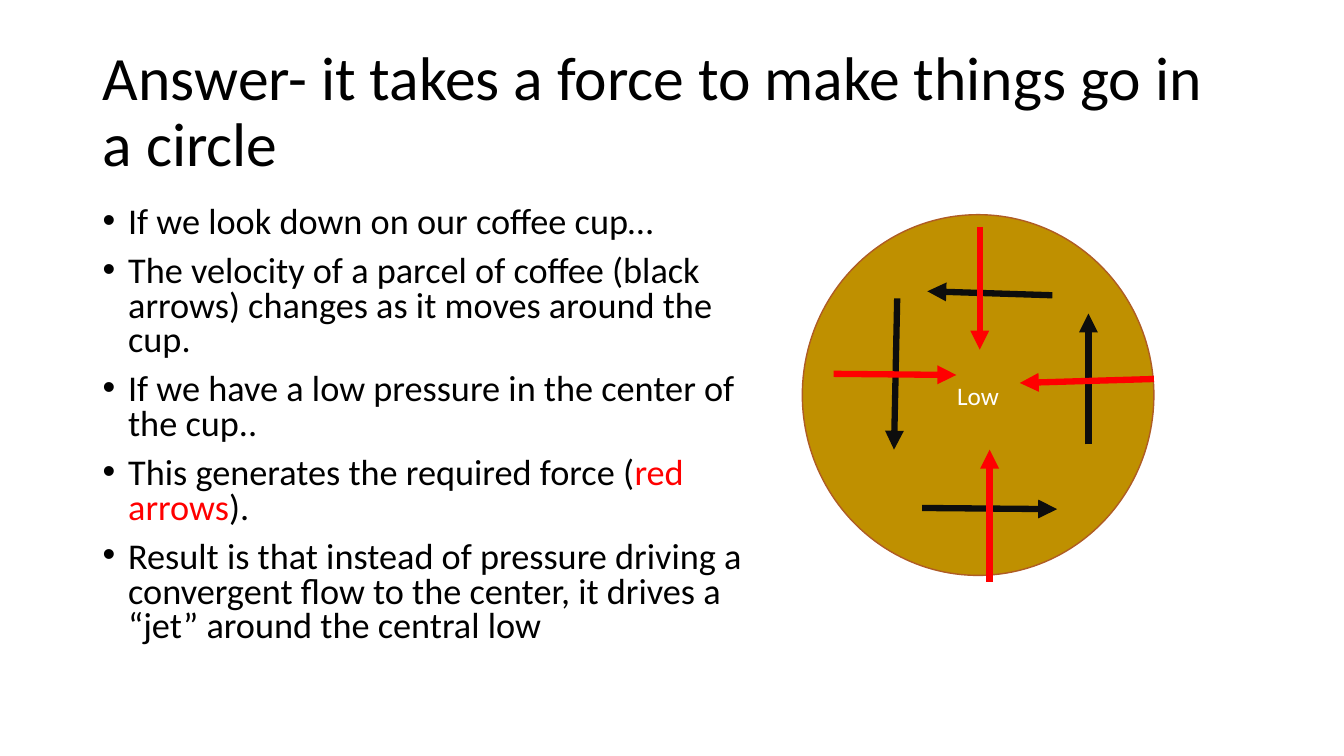
from dataclasses import dataclass

import pptx
import pptx.dml.color
import pptx.enum.shapes
import pptx.enum.text
import pptx.oxml.ns
import pptx.util
from lxml import etree
from pptx.util import Cm, Pt


@dataclass(frozen=True)
class Theme:
    font: str = "Calibri"
    text: str = "000000"
    force: str = "FF0000"
    velocity: str = "0D0D0D"
    coffee: str = "BF9000"
    rim: str = "AF5C24"
    label: str = "FFFFFF"
    title_size: float = 44
    body_size: float = 25.9
    label_size: float = 18
    arrow_width: float = 4.5


THEME = Theme()

TITLE = "Answer- it takes a force to make things go in a circle"
BULLETS = [
    [("If we look down on our coffee cup…", THEME.text)],
    [("The velocity of a parcel of coffee (black arrows) changes as it moves "
      "around the cup.", THEME.text)],
    [("If we have a low pressure in the center of the cup..", THEME.text)],
    [("This generates the required force (", THEME.text),
     ("red arrows", THEME.force), (").", THEME.text)],
    [("Result is that instead of pressure driving a convergent flow to the "
      "center, it drives a “jet” around the central low", THEME.text)],
]

# Each arrow runs from (x, y) to (x, y), in centimetres.
VELOCITY_ARROWS = [
    (23.24, 12.8, 26.64, 12.83),
    (26.52, 7.44, 23.37, 7.34),
    (27.43, 11.2, 27.43, 7.9),
    (22.61, 7.52, 22.53, 11.33),
]
FORCE_ARROWS = [
    (24.94, 14.66, 24.94, 11.33),
    (29.08, 9.55, 25.7, 9.65),
    (24.69, 5.72, 24.69, 8.81),
    (21.01, 9.42, 24.1, 9.45),
]


def rgb(color):
    return pptx.dml.color.RGBColor.from_string(color)


def add_element(parent, tag, **attributes):
    return etree.SubElement(parent, pptx.oxml.ns.qn(tag), attributes)


def add_run(paragraph, text, size, color):
    run = paragraph.add_run()
    run.text = text
    run.font.name = THEME.font
    run.font.size = Pt(size)
    run.font.color.rgb = rgb(color)


def add_text_frame(slide, left, top, width, height):
    box = slide.shapes.add_textbox(Cm(left), Cm(top), Cm(width), Cm(height))
    box.text_frame.word_wrap = True
    return box.text_frame


def add_title(slide):
    frame = add_text_frame(slide, 2.34, 1.02, 29.21, 3.68)
    frame.vertical_anchor = pptx.enum.text.MSO_ANCHOR.MIDDLE
    paragraph = frame.paragraphs[0]
    paragraph.line_spacing = 0.9
    add_run(paragraph, TITLE, THEME.title_size, THEME.text)


def make_bullet(paragraph):
    properties = paragraph._p.get_or_add_pPr()
    properties.set("marL", str(Cm(0.64)))
    properties.set("indent", str(-Cm(0.64)))
    add_element(properties, "a:buFont", typeface="Arial")
    add_element(properties, "a:buChar", char="•")


def add_bullets(slide):
    frame = add_text_frame(slide, 2.34, 5.08, 16.94, 12.09)
    for index, runs in enumerate(BULLETS):
        paragraph = frame.add_paragraph() if index else frame.paragraphs[0]
        make_bullet(paragraph)
        paragraph.line_spacing = 0.8
        paragraph.space_before = Pt(10 if index else 0)
        for text, color in runs:
            add_run(paragraph, text, THEME.body_size, color)


def add_cup(slide):
    cup = slide.shapes.add_shape(pptx.enum.shapes.MSO_SHAPE.OVAL,
                                 Cm(20.22), Cm(5.41), Cm(8.86), Cm(9.09))
    cup.shadow.inherit = False
    cup.fill.solid()
    cup.fill.fore_color.rgb = rgb(THEME.coffee)
    cup.line.color.rgb = rgb(THEME.rim)
    cup.line.width = Pt(1)
    cup.text_frame.vertical_anchor = pptx.enum.text.MSO_ANCHOR.MIDDLE
    paragraph = cup.text_frame.paragraphs[0]
    paragraph.alignment = pptx.enum.text.PP_ALIGN.CENTER
    add_run(paragraph, "Low", THEME.label_size, THEME.label)


def add_arrow(slide, ends, color):
    arrow = slide.shapes.add_connector(
        pptx.enum.shapes.MSO_CONNECTOR.STRAIGHT, *map(Cm, ends))
    arrow.line.color.rgb = rgb(color)
    arrow.line.width = Pt(THEME.arrow_width)
    properties = arrow._element.spPr
    add_element(properties.find(pptx.oxml.ns.qn("a:ln")), "a:tailEnd",
                type="triangle")
    add_element(properties, "a:effectLst")


def main():
    presentation = pptx.Presentation()
    presentation.slide_width = Cm(33.87)
    presentation.slide_height = Cm(19.05)
    slide = presentation.slides.add_slide(presentation.slide_layouts[6])
    add_title(slide)
    add_bullets(slide)
    add_cup(slide)
    for arrows, color in ((VELOCITY_ARROWS, THEME.velocity),
                          (FORCE_ARROWS, THEME.force)):
        for ends in arrows:
            add_arrow(slide, ends, color)
    presentation.save("out.pptx")


if __name__ == "__main__":
    main()
